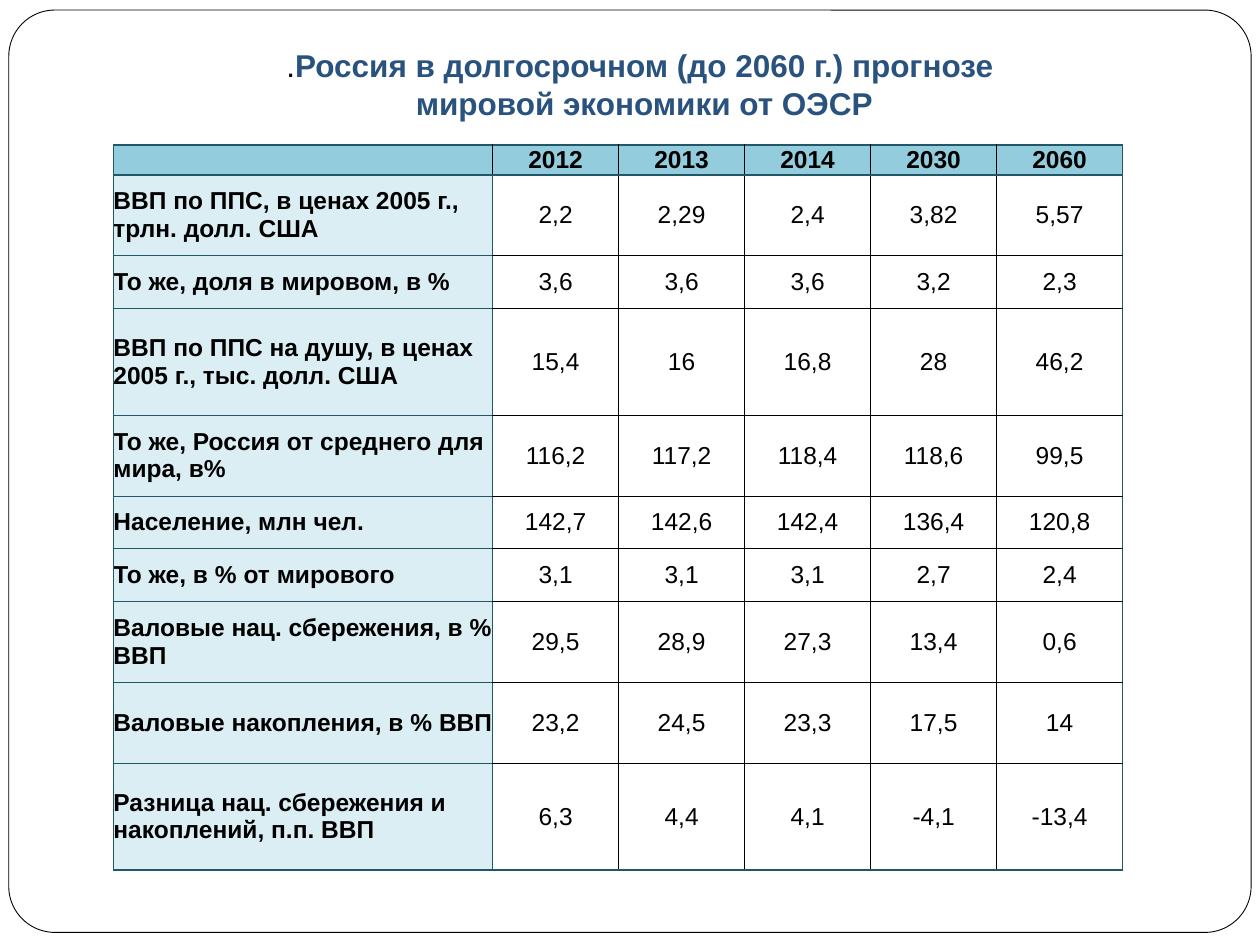
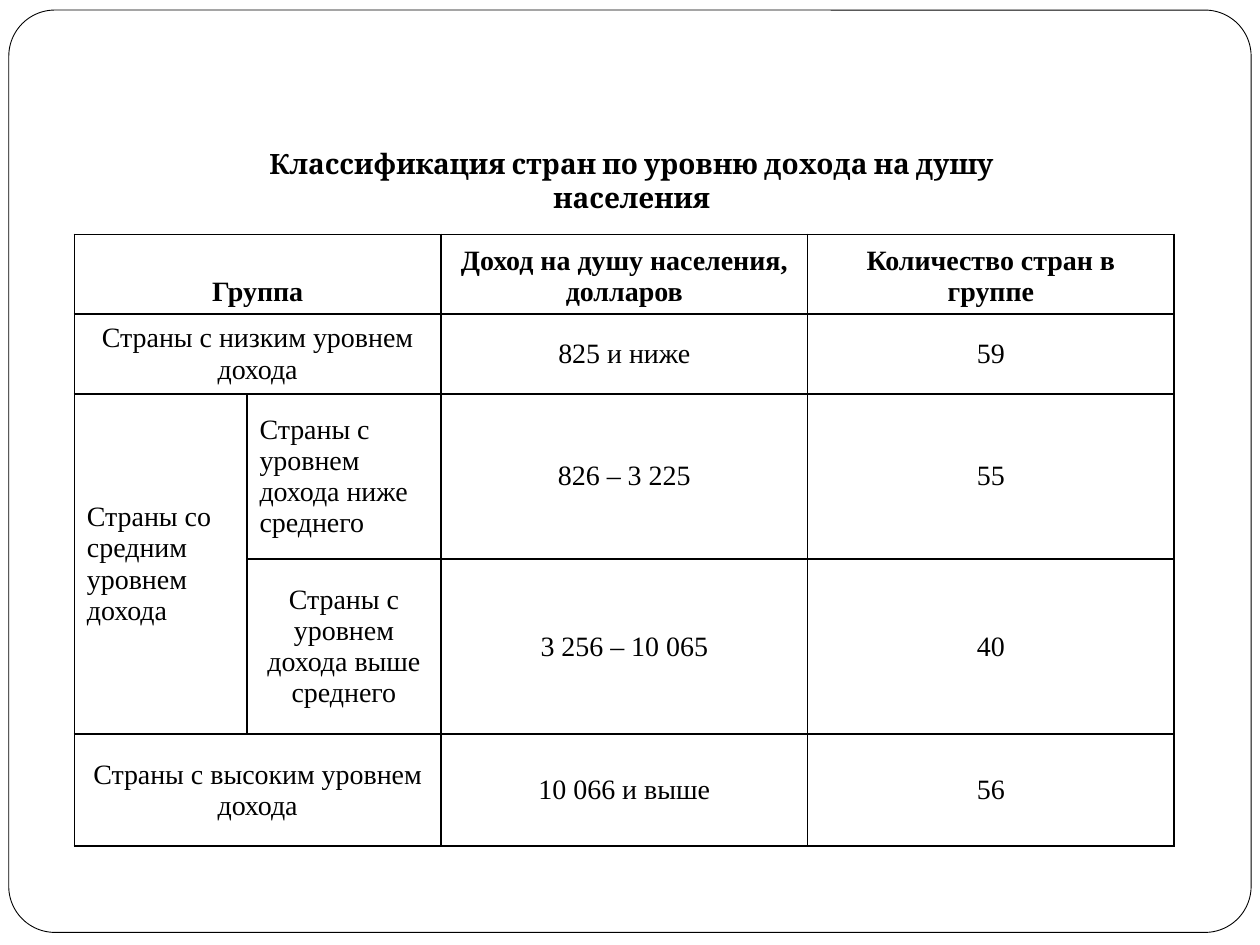
import lxml.etree
import pptx
import pptx.dml.color
import pptx.enum.shapes
import pptx.enum.text
import pptx.oxml.ns
import pptx.util

Inches = pptx.util.Inches
Pt = pptx.util.Pt
Align = pptx.enum.text.PP_ALIGN
Anchor = pptx.enum.text.MSO_ANCHOR

BLACK, WHITE = "000000", "FFFFFF"
TITLE_BLUE, TEAL = "29527E", "215867"
HEADER_FILL, LABEL_FILL = "93CDDD", "DBEEF3"

YEARS = ["", "2012", "2013", "2014", "2030", "2060"]
FORECAST = [
    ["ВВП по ППС, в ценах 2005 г., трлн. долл. США", "2,2", "2,29", "2,4", "3,82", "5,57"],
    ["То же, доля в мировом, в %", "3,6", "3,6", "3,6", "3,2", "2,3"],
    ["ВВП по ППС на душу, в ценах 2005 г., тыс. долл. США", "15,4", "16", "16,8", "28", "46,2"],
    ["То же, Россия от среднего для мира, в%", "116,2", "117,2", "118,4", "118,6", "99,5"],
    ["Население, млн чел.", "142,7", "142,6", "142,4", "136,4", "120,8"],
    ["То же, в % от мирового", "3,1", "3,1", "3,1", "2,7", "2,4"],
    ["Валовые нац. сбережения, в % ВВП", "29,5", "28,9", "27,3", "13,4", "0,6"],
    ["Валовые накопления, в % ВВП", "23,2", "24,5", "23,3", "17,5", "14"],
    ["Разница нац. сбережения и накоплений, п.п. ВВП", "6,3", "4,4", "4,1", "-4,1", "-13,4"],
]
FORECAST_HEIGHTS = [0.22, 0.64, 0.42, 0.85, 0.64, 0.42, 0.42, 0.64, 0.64, 0.85]

INCOME_GROUPS = [
    ["Группа", "", "Доход на душу населения, долларов", "Количество стран в группе"],
    ["Страны с низким уровнем дохода", "", "825 и ниже", "59"],
    ["Страны со средним уровнем дохода", "Страны с уровнем дохода ниже среднего",
     "826 – 3 225", "55"],
    ["", "Страны с уровнем дохода выше среднего", "3 256 – 10 065", "40"],
    ["Страны с высоким уровнем дохода", "", "10 066 и выше", "56"],
]
INCOME_HEIGHTS = [0.63, 0.63, 1.31, 1.39, 0.89]
INCOME_MERGES = [((0, 0), (0, 1)), ((1, 0), (1, 1)), ((2, 0), (3, 0)), ((4, 0), (4, 1))]


def color(value):
    """Turn a hex string into a colour."""
    return pptx.dml.color.RGBColor.from_string(value)


def set_attributes(target, values):
    """Set every attribute named in a dict of format values."""
    for name, value in values.items():
        setattr(target, name, value)


def add_run(paragraph, text, font, size, bold=False, ink=BLACK):
    """Add formatted text to a paragraph."""
    run = paragraph.add_run()
    run.text = text
    set_attributes(run.font, {"name": font, "size": Pt(size), "bold": bold})
    run.font.color.rgb = color(ink)


def add_framed_slide(presentation):
    """Add a blank slide with the rounded frame."""
    slide = presentation.slides.add_slide(presentation.slide_layouts[6])
    frame = slide.shapes.add_shape(
        pptx.enum.shapes.MSO_SHAPE.ROUNDED_RECTANGLE,
        Inches(0.07), Inches(0.08), Inches(9.86), Inches(7.32))
    frame.adjustments[0] = 0.05
    frame.shadow.inherit = False
    frame.fill.solid()
    frame.fill.fore_color.rgb = color(WHITE)
    frame.line.color.rgb = color(BLACK)
    frame.line.width = Pt(0.5)
    return slide


def add_title(slide, box, lines):
    """Add a centred title whose lines are lists of run arguments."""
    frame = slide.shapes.add_textbox(*map(Inches, box)).text_frame
    set_attributes(frame, {"word_wrap": True, "vertical_anchor": Anchor.MIDDLE,
                           "margin_top": 0, "margin_bottom": 0})
    for index, runs in enumerate(lines):
        paragraph = frame.add_paragraph() if index else frame.paragraphs[0]
        paragraph.alignment = Align.CENTER
        for run in runs:
            add_run(paragraph, *run)


def add_grid(slide, left, top, widths, heights):
    """Add a table without banding and return it."""
    table = slide.shapes.add_table(
        len(heights), len(widths), Inches(left), Inches(top),
        Inches(sum(widths)), Inches(sum(heights))).table
    set_attributes(table, {"first_row": False, "horz_banding": False})
    for column, width in zip(table.columns, widths):
        column.width = Inches(width)
    for row, height in zip(table.rows, heights):
        row.height = Inches(height)
    return table


def style_cell(cell, borders, fill=None, **layout):
    """Give a cell its borders (left, right, top, bottom), fill and layout."""
    properties = cell._tc.get_or_add_tcPr()
    for side, (ink, width) in zip("LRTB", borders):
        line = lxml.etree.SubElement(
            properties, pptx.oxml.ns.qn("a:ln" + side), w=str(Pt(width)))
        solid = lxml.etree.SubElement(line, pptx.oxml.ns.qn("a:solidFill"))
        lxml.etree.SubElement(solid, pptx.oxml.ns.qn("a:srgbClr"), val=ink)
    if fill:
        cell.fill.solid()
        cell.fill.fore_color.rgb = color(fill)
    else:
        cell.fill.background()
    set_attributes(cell, layout)


def write_cell(cell, text, alignment, font, size, bold):
    """Write aligned text in a cell."""
    paragraph = cell.text_frame.paragraphs[0]
    paragraph.alignment = alignment
    if text:
        add_run(paragraph, text, font, size, bold)
    else:
        paragraph.font.size = Pt(size)


def forecast_borders(row, column):
    """Return the borders of a forecast cell: teal round header and labels."""
    def vertical(edge):
        teal = edge in (0, len(YEARS)) or (edge == 1 and row > 0)
        return (TEAL if teal else BLACK, 0.5)

    def horizontal(edge):
        heavy = edge in (0, 1, len(FORECAST_HEIGHTS))
        return (TEAL if heavy or column == 0 else BLACK, 1.5 if heavy else 0.5)

    return [vertical(column), vertical(column + 1), horizontal(row), horizontal(row + 1)]


def add_forecast_table(slide):
    """Add the table of forecast figures by year."""
    table = add_grid(slide, 0.9, 1.15, [3.01] + [1.0] * 5, FORECAST_HEIGHTS)
    for row, texts in enumerate([YEARS] + FORECAST):
        for column, text in enumerate(texts):
            cell = table.cell(row, column)
            is_label = column == 0
            fill = HEADER_FILL if row == 0 else LABEL_FILL if is_label else None
            style_cell(cell, forecast_borders(row, column), fill,
                       vertical_anchor=Anchor.MIDDLE, margin_left=0,
                       margin_right=0, margin_top=0, margin_bottom=0)
            write_cell(cell, text, Align.LEFT if is_label else Align.CENTER,
                       "Arial", 14, row == 0 or is_label)


def add_income_table(slide):
    """Add the table of country groups by income."""
    table = add_grid(slide, 0.59, 1.86, [1.37, 1.54, 2.91, 2.91], INCOME_HEIGHTS)
    for first, last in INCOME_MERGES:
        table.cell(*first).merge(table.cell(*last))
    for row, texts in enumerate(INCOME_GROUPS):
        for column, text in enumerate(texts):
            cell = table.cell(row, column)
            anchor = Anchor.BOTTOM if row == 0 else Anchor.MIDDLE
            style_cell(cell, [(BLACK, 1)] * 4, vertical_anchor=anchor)
            if not cell.is_spanned:
                alignment = Align.LEFT if row == 2 and column < 2 else Align.CENTER
                write_cell(cell, text, alignment, "Times New Roman", 16, row == 0)


def main():
    """Build and save the presentation."""
    presentation = pptx.Presentation()
    set_attributes(presentation, {"slide_width": Inches(10), "slide_height": Inches(7.5)})

    slide = add_framed_slide(presentation)
    add_forecast_table(slide)
    add_title(slide, (0.83, 0.36, 8.5, 0.61), [
        [(".", "Arial", 18),
         ("Россия в долгосрочном (до 2060 г.) прогнозе", "Arial", 18, True, TITLE_BLUE)],
        [(" мировой экономики от ОЭСР", "Arial", 18, True, TITLE_BLUE)],
    ])

    slide = add_framed_slide(presentation)
    add_title(slide, (1.83, 1.13, 6.37, 0.6), [
        [("Классификация стран по уровню дохода на душу населения", "Cambria", 16, True)],
    ])
    add_income_table(slide)

    presentation.save("out.pptx")


if __name__ == "__main__":
    main()
